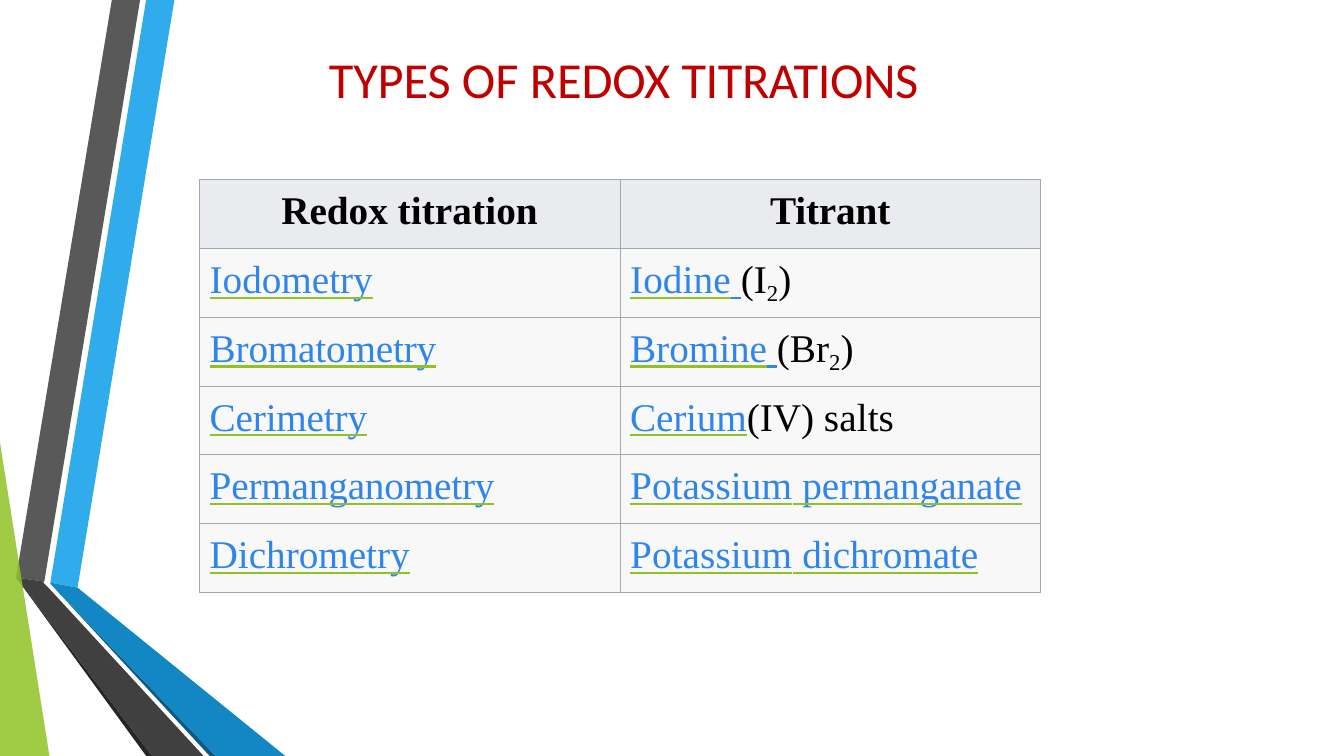
from dataclasses import dataclass

from lxml.etree import SubElement
from pptx import Presentation
from pptx.dml.color import RGBColor
from pptx.enum.text import MSO_ANCHOR as Anchor, MSO_AUTO_SIZE as AutoSize, PP_ALIGN as Align
from pptx.oxml.ns import qn
from pptx.util import Pt

PX = 9144  # EMU in one px, 100 px to the inch

RED = RGBColor(0xC0, 0x00, 0x00)
BLACK = RGBColor(0x00, 0x00, 0x00)
LINK_BLUE = RGBColor(0x30, 0x85, 0xED)
GREEN = RGBColor(0x90, 0xC2, 0x25)
BORDER = RGBColor(0xA1, 0xA9, 0xB0)
HEADER_FILL = RGBColor(0xEA, 0xEB, 0xEF)
BODY_FILL = RGBColor(0xF8, 0xF8, 0xF9)


@dataclass
class Band:
    color: RGBColor
    points: list[tuple[int, int]]
    alpha: int = 100


@dataclass
class Part:
    text: str
    link: bool = False
    spacing: int = 0  # hundredths of a point
    subscript: bool = False
    green_line: bool = True


BANDS = [
    Band(RGBColor(0x30, 0xAC, 0xEC), [(50, 578), (77, 583), (173, 0), (145, 0)]),
    Band(RGBColor(0x59, 0x59, 0x59), [(139, 0), (111, 0), (16, 573), (44, 577)]),
    Band(RGBColor(0x26, 0x26, 0x26), [(16, 573), (145, 750), (151, 750)]),
    Band(RGBColor(0x0C, 0x5A, 0x82), [(50, 579), (208, 750), (214, 750)]),
    Band(RGBColor(0x12, 0x87, 0xC3), [(50, 579), (214, 750), (283, 750), (77, 583), (50, 578)]),
    Band(RGBColor(0x40, 0x40, 0x40), [(202, 750), (48, 583), (43, 578), (44, 577), (16, 573), (151, 750)]),
    Band(GREEN, [(0, 439), (0, 750), (49, 750)], alpha=85),
]

TITLE = [Part("TYPES ", spacing=-10), Part("OF "), Part("REDOX ", spacing=-10),
         Part("TITRATIONS", spacing=-30)]
HEADER = [[Part("Redox "), Part("titration", spacing=10)], [Part("Titrant", spacing=-10)]]


def element_titrant(name: str, symbol: str, spacing: int, gap: int) -> list[Part]:
    return [Part(name, True, spacing), Part(" ", True, gap, green_line=False),
            Part(f"({symbol}"), Part("2", subscript=True), Part(")")]


def potassium_salt(anion: str) -> list[Part]:
    return [Part("Potassium", True, 10), Part(" ", True, -110), Part(anion, True)]


ROWS = [
    HEADER,
    [[Part("Iodometry", True)], element_titrant("Iodine", "I", 10, -90)],
    [[Part("Bromatometry", True, -10)], element_titrant("Bromine", "Br", 0, -40)],
    [[Part("Cerimetry", True, -10)],
     [Part("Cerium", True, -10), Part("(IV) "), Part("salts", spacing=10)]],
    [[Part("Permanganometry", True, -10)], potassium_salt("permanganate")],
    [[Part("Dichrometry", True)], potassium_salt("dichromate")],
]


def draw_band(shapes, band: Band) -> None:
    builder = shapes.build_freeform(*band.points[0], scale=PX)
    builder.add_line_segments(band.points[1:], close=True)
    sp = builder.convert_to_shape()
    sp.shadow.inherit = False
    sp.line.fill.background()
    sp.fill.solid()
    sp.fill.fore_color.rgb = band.color
    if band.alpha < 100:
        color = sp._element.spPr.find(qn("a:solidFill"))[0]
        SubElement(color, qn("a:alpha"), val=str(band.alpha * 1000))


def add_color(parent, tag: str, color: RGBColor) -> None:
    fill = SubElement(parent, qn(tag))
    SubElement(fill, qn("a:srgbClr"), val=str(color))


def write_parts(p, parts: list[Part], color: RGBColor, **font_format) -> None:
    for part in parts:
        r = p.add_run()
        r.text = part.text
        r.font.color.rgb = LINK_BLUE if part.link else color
        r_pr = r.font._element
        if part.link:
            r.font.underline = True
            if part.green_line:
                u_fill = SubElement(r_pr, qn("a:uFill"))
                add_color(u_fill, "a:solidFill", GREEN)
        for name, value in font_format.items():
            setattr(r.font, name, value)
        if part.spacing:
            r_pr.set("spc", str(part.spacing))
        if part.subscript:
            r_pr.set("baseline", "-20000")


def draw_title(shapes) -> None:
    sp = shapes.add_textbox(*(v * PX for v in (239, 46, 759, 63)))
    tf = sp.text_frame
    frame_format = dict(word_wrap=True, auto_size=AutoSize.SHAPE_TO_FIT_TEXT,
                        vertical_anchor=Anchor.MIDDLE, margin_left=0, margin_right=0,
                        margin_top=PX, margin_bottom=0)
    for name, value in frame_format.items():
        setattr(tf, name, value)
    p = tf.paragraphs[0]
    p.alignment = Align.CENTER
    p.space_before = Pt(1)
    write_parts(p, TITLE, RED, name="Calibri", size=Pt(36))


def set_borders(cell) -> None:
    """Outline all four sides; the lines must come before the cell's fill."""
    tc_pr = cell._tc.get_or_add_tcPr()
    for side in ("L", "R", "T", "B"):
        line = SubElement(tc_pr, qn(f"a:ln{side}"), w=str(Pt(0.75)))
        add_color(line, "a:solidFill", BORDER)


def draw_table(shapes) -> None:
    frame = shapes.add_table(len(ROWS), 2, *(v * PX for v in (198, 178, 834, 410)))
    table = frame.table
    table.first_row = table.horz_banding = False
    for i, row in enumerate(ROWS):
        is_header = i == 0
        for j, parts in enumerate(row):
            cell = table.cell(i, j)
            cell.margin_left = cell.margin_right = cell.margin_bottom = 0
            cell.margin_top = 10 * PX
            set_borders(cell)
            cell.fill.solid()
            cell.fill.fore_color.rgb = HEADER_FILL if is_header else BODY_FILL
            p = cell.text_frame.paragraphs[0]
            p.space_before = Pt(7)
            if is_header and j == 1:
                p.alignment = Align.CENTER
            else:
                p._p.get_or_add_pPr().set("marL", str((81 if is_header else 10) * PX))
            write_parts(p, parts, BLACK, name="Times New Roman", size=Pt(28), bold=is_header)


def main() -> None:
    prs = Presentation()
    prs.slide_width, prs.slide_height = 1333 * PX, 750 * PX
    shapes = prs.slides.add_slide(prs.slide_layouts[6]).shapes
    for band in BANDS:
        draw_band(shapes, band)
    draw_title(shapes)
    draw_table(shapes)
    prs.save("out.pptx")


if __name__ == "__main__":
    main()
